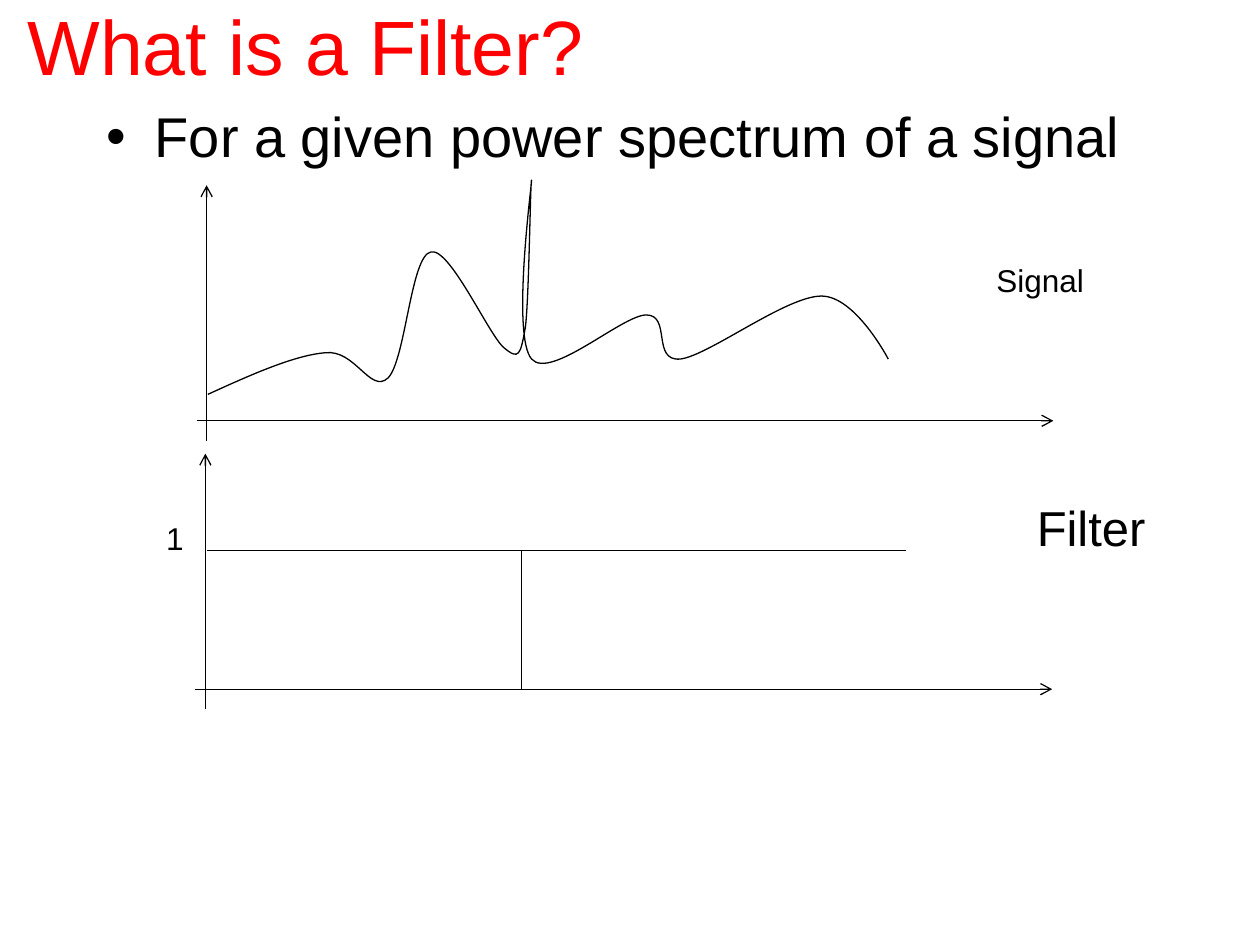
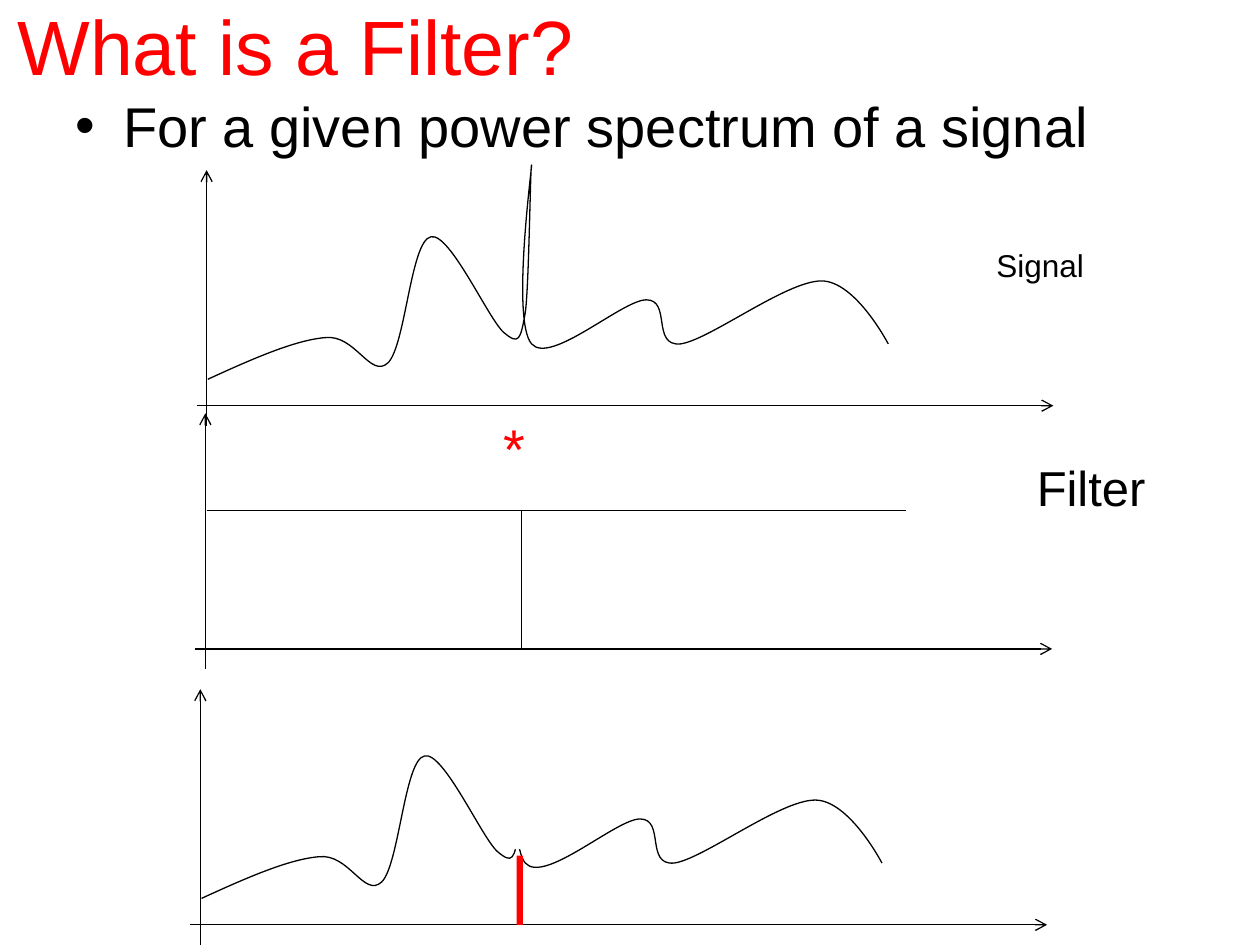
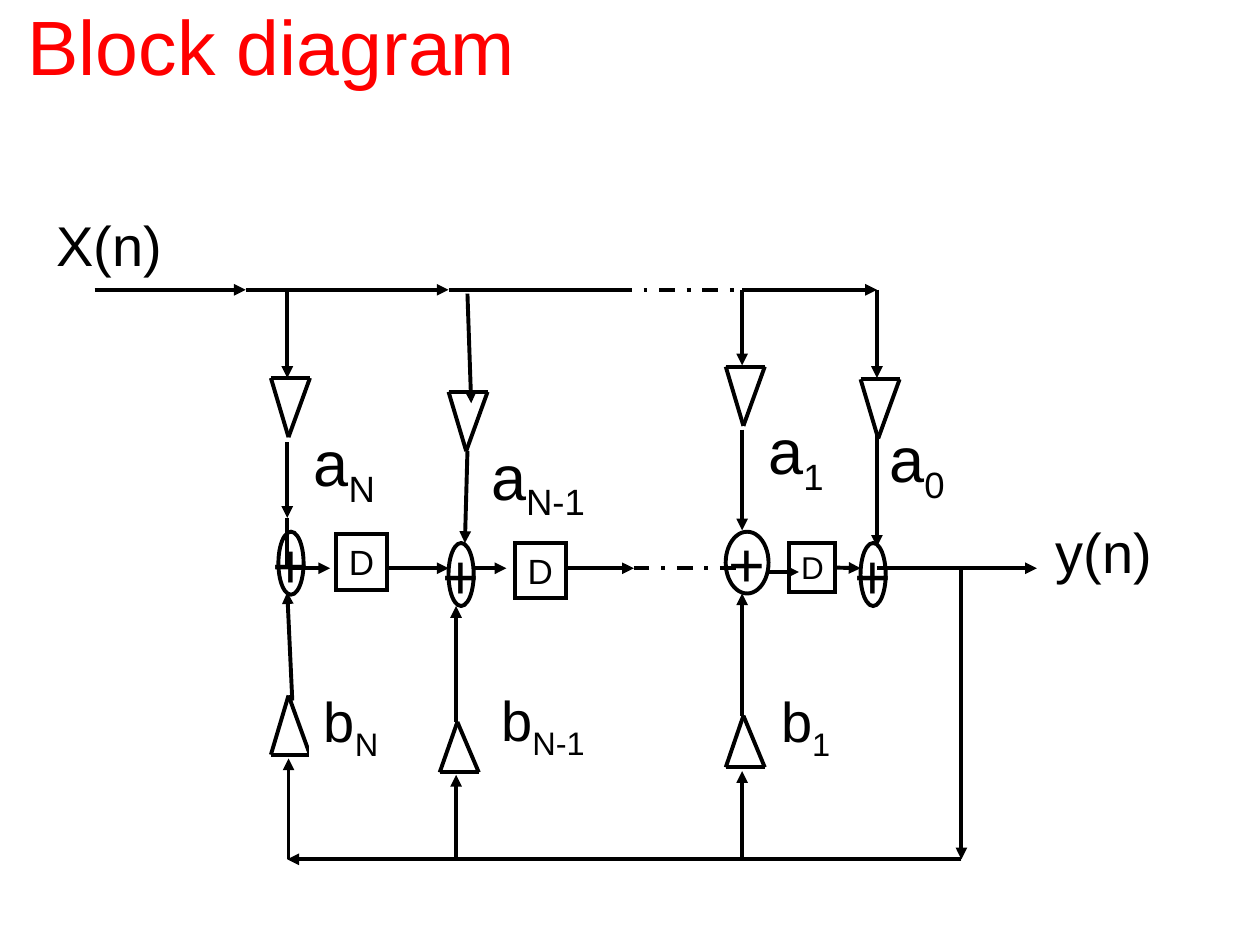
"""Build three slides on filters: spectrum, notch filtering and block diagram."""
from dataclasses import dataclass
from itertools import chain

from lxml import etree
from pptx import Presentation
from pptx.dml.color import RGBColor
from pptx.enum.dml import MSO_LINE
from pptx.enum.shapes import MSO_CONNECTOR, MSO_SHAPE
from pptx.enum.text import MSO_ANCHOR, PP_ALIGN
from pptx.oxml.ns import qn
from pptx.util import Pt

PX = 9144
STRAIGHT = MSO_CONNECTOR.STRAIGHT
RECT = MSO_SHAPE.RECTANGLE
OVAL = MSO_SHAPE.OVAL
DASH_DOT = MSO_LINE.DASH_DOT
TOP = MSO_ANCHOR.TOP
MIDDLE = MSO_ANCHOR.MIDDLE
LEFT = PP_ALIGN.LEFT
CENTER = PP_ALIGN.CENTER
RIGHT_SIDE = 3


@dataclass(frozen=True)
class Theme:
    """Colours, font, type sizes and line widths of the deck."""
    ink: RGBColor = RGBColor(0, 0, 0)
    accent: RGBColor = RGBColor(255, 0, 0)
    paper: RGBColor = RGBColor(255, 255, 255)
    font: str = "Arial"
    title: int = 44
    symbol: int = 36
    body: int = 32
    caption: int = 28
    delay: int = 20
    small: int = 18
    thin: float = 0.75
    bold: float = 2.25


THEME = Theme()

SPECTRUM_START = (9, -21)
SPECTRUM_CURVES = [
    ((44, -37), (78, -52), (102, -54)),
    ((126, -57), (138, -21), (152, -34)),
    ((166, -48), (170, -131), (186, -134)),
    ((201, -138), (232, -68), (244, -58)),
    ((256, -48), (257, -52), (261, -74)),
    ((264, -97), (265, -195), (266, -191)),
    ((266, -187), (250, -67), (266, -49)),
    ((281, -32), (338, -84), (357, -84)),
    ((377, -84), (361, -47), (384, -49)),
    ((407, -52), (468, -99), (496, -99)),
    ((523, -99), (549, -49), (549, -49)),
]

ARROWS = [
    (75, 230, 195, 230), (255, 230, 356, 230), (589, 230, 696, 230),
    (228, 230, 228, 300), (371, 233, 374, 320),
    (589, 230, 589, 290), (696, 230, 696, 300),
    (228, 351, 228, 411), (371, 358, 369, 431),
    (589, 341, 589, 421), (696, 343, 696, 434),
    (229, 451, 262, 451), (309, 451, 356, 451), (376, 451, 402, 451),
    (449, 451, 503, 451), (610, 454, 634, 454), (696, 451, 823, 451),
    (763, 451, 763, 682), (763, 682, 228, 682),
    (229, 682, 229, 602), (362, 682, 362, 615), (589, 682, 589, 612),
    (232, 556, 228, 470), (362, 573, 362, 481), (589, 568, 589, 471),
]
PLAIN_WIRES = [(195, 230, 255, 230), (356, 230, 489, 230), (228, 411, 228, 451)]
DASHED_WIRES = [(489, 230, 589, 230), (503, 451, 589, 451)]

FORWARD_GAINS = [
    ("N", (215, 300), (239, 331, 73, 71), THEME.paper),
    ("N-1", (356, 311), (380, 342, 103, 71), THEME.paper),
    ("1", (576, 291), (600, 322, 67, 71), THEME.paper),
    ("0", (683, 301), (696, 328, 67, 71), None),
]
FEEDBACK_GAINS = [
    ("N", (215, 599), 552, (247, 540, 67, 64)),
    ("N-1", (349, 613), 573, (388, 539, 128, 64)),
    ("1", (576, 609), 568, (610, 540, 89, 64)),
]
ADDERS = [(221, 422, 20, 50), (356, 431, 20, 50),
          (576, 422, 34, 49), (683, 431, 20, 50)]
DELAYS = [(267, 424, 40, 44), (409, 431, 40, 44)]


def scaled(lengths):
    """Turn px lengths into EMU."""
    return [round(length * PX) for length in lengths]


def style_paragraph(paragraph, size, color):
    """Set the font of a whole paragraph."""
    font = paragraph.font
    font.name, font.size, font.color.rgb = THEME.font, Pt(size), color


def write(shape, text, size, color=THEME.ink, anchor=TOP, align=LEFT, wrap=False):
    """Write one paragraph into a shape and return it."""
    frame = shape.text_frame
    frame.word_wrap = wrap
    frame.vertical_anchor = anchor
    paragraph = frame.paragraphs[0]
    paragraph.alignment = align
    paragraph.add_run().text = text
    style_paragraph(paragraph, size, color)
    return paragraph


def add_label(slide, box, text, size, color=THEME.ink, subscript="", outline=None):
    """Add a one-line label, with an optional subscript and outline."""
    label = slide.shapes.add_textbox(*scaled(box))
    paragraph = write(label, text, size, color)
    if subscript:
        index = paragraph.add_run()
        index.text = subscript
        index._r.get_or_add_rPr().set("baseline", "-25000")
    if outline is not None:
        label.line.color.rgb = outline
        label.line.width = Pt(THEME.bold)


def add_title(slide, left, text):
    """Add the red slide title."""
    title = slide.shapes.add_textbox(*scaled((left, -27, 900, 125)))
    write(title, text, THEME.title, THEME.accent, anchor=MIDDLE, wrap=True)


def add_bullet(slide, box, text):
    """Add a bulleted statement with a hanging indent."""
    statement = slide.shapes.add_textbox(*scaled(box))
    paragraph = write(statement, text, THEME.body, wrap=True)
    paragraph.space_before = Pt(3)
    properties = paragraph._p.get_or_add_pPr()
    properties.set("marL", str(38 * PX))
    properties.set("indent", str(-38 * PX))
    font = properties.find(qn("a:defRPr"))
    font.addprevious(etree.Element(qn("a:buFont"), typeface=THEME.font))
    font.addprevious(etree.Element(qn("a:buChar"), char="•"))


def add_wire(slide, ends, width, head=None, dash=None):
    """Add a straight line with an optional arrowhead and dash."""
    wire = slide.shapes.add_connector(STRAIGHT, *scaled(ends))
    wire.line.color.rgb = THEME.ink
    wire.line.width = Pt(width)
    if dash is not None:
        wire.line.dash_style = dash
    properties = wire._element.spPr
    if head:
        etree.SubElement(properties.find(qn("a:ln")), qn("a:tailEnd"), type=head)
    etree.SubElement(properties, qn("a:effectLst"))
    return wire


def outline_shape(shape, width):
    """Give a shape a black outline and no fill."""
    shape.shadow.inherit = False
    shape.fill.background()
    shape.line.color.rgb = THEME.ink
    shape.line.width = Pt(width)


def add_outlined(slide, kind, box):
    """Add an unfilled diagram symbol with sharp corners."""
    symbol = slide.shapes.add_shape(kind, *scaled(box))
    outline_shape(symbol, THEME.bold)
    outline = symbol._element.spPr.find(qn("a:ln"))
    etree.SubElement(outline, qn("a:miter"), lim="800000")
    return symbol


def add_gain_triangle(slide, left, base, tip):
    """Draw an amplifier triangle from its base line to its tip."""
    corners = [(left, base), (left + 31, base), (left + 14, tip)]
    for start, end in zip(corners, corners[1:] + corners[:1]):
        add_wire(slide, (*start, *end), THEME.bold)


def add_block(slide, box, color):
    """Add a filled rectangle without outline."""
    block = slide.shapes.add_shape(RECT, *scaled(box))
    block.shadow.inherit = False
    block.fill.solid()
    block.fill.fore_color.rgb = color
    block.line.fill.background()


def bend_segments(shape):
    """Turn each three line segments of a freeform into one Bézier curve."""
    segments = list(shape._element.iter(qn("a:lnTo")))
    for first in range(0, len(segments), 3):
        curve = etree.Element(qn("a:cubicBezTo"))
        segments[first].addprevious(curve)
        for segment in segments[first:first + 3]:
            curve.append(segment[0])
            segment.getparent().remove(segment)


def add_axes(slide, left, base):
    """Add a horizontal and a vertical axis."""
    add_wire(slide, (left, base, left + 680, base), THEME.thin, "arrow")
    add_wire(slide, (left + 8, base + 16, left + 8, base - 187), THEME.thin, "arrow")


def add_spectrum(slide, left, base):
    """Add axes with the power spectrum."""
    add_axes(slide, left, base)
    start, *controls = [scaled((left + x, base + y)) for x, y in
                        chain([SPECTRUM_START], *SPECTRUM_CURVES)]
    builder = slide.shapes.build_freeform(*start)
    builder.add_line_segments(controls, close=False)
    spectrum = builder.convert_to_shape()
    bend_segments(spectrum)
    outline_shape(spectrum, THEME.thin)


def add_signal(slide, base):
    """Add the labelled input spectrum."""
    add_spectrum(slide, 156, base)
    add_label(slide, (781, base - 132, 90, 40), "Signal", THEME.small)


def add_filter(slide, base):
    """Add the labelled notch filter response."""
    left, gain = 155, base - 110
    add_axes(slide, left, base)
    add_wire(slide, (left + 9, gain, left + 564, gain), THEME.thin)
    add_wire(slide, (left + 259, gain, left + 259, base), THEME.thin)
    add_label(slide, (813, base - 157, 108, 57), "Filter", THEME.caption)


def build_filter_slide(slide):
    """Show a spectrum and a filter."""
    add_title(slide, 12, "What is a Filter?")
    add_bullet(slide, (75, 76, 900, 495), "For a given power spectrum of a signal")
    add_signal(slide, 334)
    add_filter(slide, 547)
    add_label(slide, (122, 407, 34, 40), "1", THEME.small)


def build_result_slide(slide):
    """Show the spectrum, the filter and the filtered result."""
    add_title(slide, 4, "What is a Filter?")
    add_bullet(slide, (50, 68, 900, 129), "For a given power spectrum of a signal")
    add_signal(slide, 322)
    add_filter(slide, 515)
    add_label(slide, (390, 323, 38, 64), "*", THEME.body, THEME.accent)
    add_spectrum(slide, 151, 734)
    add_block(slide, (410, 679, 5, 55), THEME.accent)
    add_block(slide, (398, 540, 31, 134), THEME.paper)


def build_diagram_slide(slide):
    """Show the block diagram of the recursive filter."""
    add_title(slide, 12, "Block diagram")
    for ends in ARROWS:
        add_wire(slide, ends, THEME.bold, "triangle")
    for ends in PLAIN_WIRES:
        add_wire(slide, ends, THEME.bold)
    for ends in DASHED_WIRES:
        add_wire(slide, ends, THEME.bold, dash=DASH_DOT)
    for index, (left, base), box, outline in FORWARD_GAINS:
        add_gain_triangle(slide, left, base, base + 47)
        add_label(slide, box, "a", THEME.symbol, subscript=index, outline=outline)
    for index, (left, base), tip, box in FEEDBACK_GAINS:
        add_gain_triangle(slide, left, base, tip)
        add_label(slide, box, "b", THEME.body, subscript=index, outline=THEME.paper)
    for box in ADDERS:
        adder = add_outlined(slide, OVAL, box)
        write(adder, "+", THEME.symbol, anchor=MIDDLE, align=CENTER)
    for box in DELAYS:
        write(add_outlined(slide, RECT, box), "D", THEME.delay)
    last_delay = add_outlined(slide, RECT, (626, 431, 37, 39))
    add_label(slide, (626, 430, 38, 40), "D", THEME.small)
    last_step = add_wire(slide, (663, 451, 683, 451), THEME.bold, "triangle")
    last_step.begin_connect(last_delay, RIGHT_SIDE)
    add_label(slide, (35, 162, 105, 64), "X(n)", THEME.body, outline=THEME.paper)
    add_label(slide, (828, 406, 97, 64), "y(n)", THEME.body, outline=THEME.paper)


def main():
    """Build and save the deck."""
    deck = Presentation()
    deck.slide_width, deck.slide_height = scaled((1000, 750))
    blank = deck.slide_layouts[6]
    for build in (build_filter_slide, build_result_slide, build_diagram_slide):
        build(deck.slides.add_slide(blank))
    deck.save("out.pptx")


if __name__ == "__main__":
    main()
